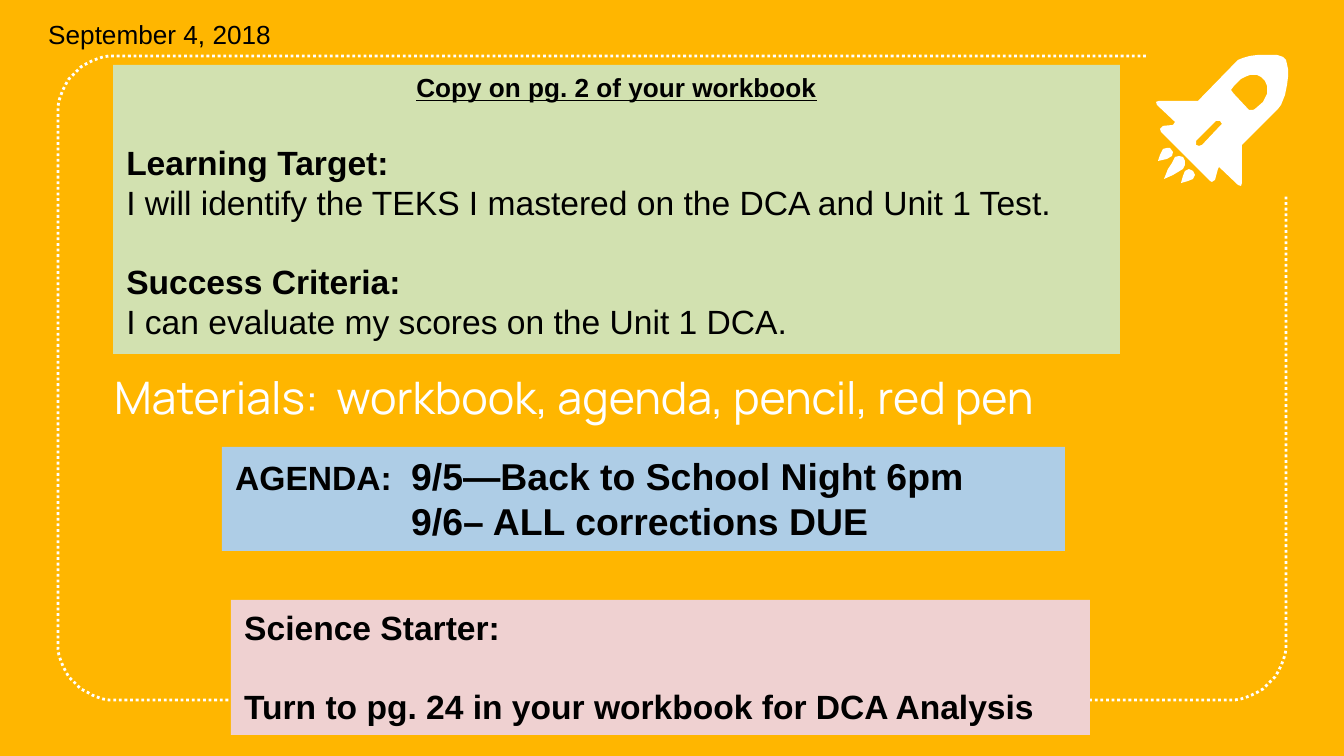
"""Build the class opener slide with learning target, materials, agenda and starter."""
from math import cos, radians, sin

from pptx import Presentation
from pptx.dml.color import RGBColor
from pptx.enum.dml import MSO_LINE
from pptx.enum.shapes import MSO_SHAPE
from pptx.enum.text import MSO_ANCHOR, MSO_AUTO_SIZE, PP_ALIGN
from pptx.util import Emu, Pt

PX = 914400 / 134.4
AMBER = RGBColor(0xFF, 0xB6, 0x00)
WHITE = RGBColor(0xFF, 0xFF, 0xFF)
BLACK = RGBColor(0x00, 0x00, 0x00)
GREEN = RGBColor(0xD2, 0xE1, 0xB0)
PINK = RGBColor(0xEF, 0xD1, 0xD1)
BLUE = RGBColor(0xAE, 0xCD, 0xE6)


def px(length):
    return Emu(round(length * PX))


def draw_outline(shapes, contours, close):
    builder = shapes.build_freeform(*contours[0][0], scale=PX)
    for index, points in enumerate(contours):
        if index:
            builder.move_to(*points[0])
        builder.add_line_segments(points[1:], close=close)
    shape = builder.convert_to_shape()
    shape.shadow.inherit = False
    return shape


presentation = Presentation()
presentation.slide_width = px(1344)
presentation.slide_height = px(756)
slide = presentation.slides.add_slide(presentation.slide_layouts[5])
slide.background.fill.solid()
slide.background.fill.fore_color.rgb = AMBER

left, top, right, bottom, radius = 58, 56, 1286, 700, 57
corners = [
    (left + radius, top + radius, 270),
    (left + radius, bottom - radius, 180),
    (right - radius, bottom - radius, 90),
]
frame_points = [(1146, top)]
for center_x, center_y, start in corners:
    for step in range(0, 91, 6):
        angle = radians(start - step)
        frame_points.append((center_x + radius * cos(angle), center_y + radius * sin(angle)))
frame_points.append((right, 196))
frame = draw_outline(slide.shapes, [frame_points], close=False)
frame.fill.background()
frame.line.color.rgb = WHITE
frame.line.width = Pt(1.5)
frame.line.dash_style = MSO_LINE.ROUND_DOT

rocket_body = [
    (1266, 55), (1258, 55), (1250, 56), (1243, 58), (1238, 60), (1234, 64), (1198, 101),
    (1159, 101), (1156, 102), (1157, 105), (1175, 122), (1173, 125), (1163, 126),
    (1160, 129), (1161, 132), (1210, 181), (1212, 182), (1215, 180), (1218, 169),
    (1219, 167), (1238, 185), (1241, 186), (1242, 183), (1242, 145), (1278, 109),
    (1281, 105), (1285, 95), (1287, 85), (1288, 77), (1288, 69), (1286, 60),
    (1283, 57), (1277, 55),
]
rocket_window = [
    (1253, 75), (1257, 75), (1261, 77), (1265, 81), (1267, 86), (1267, 94), (1263, 102),
    (1255, 109), (1253, 110), (1249, 110), (1234, 94), (1231, 90), (1234, 86),
    (1241, 79), (1245, 77), (1250, 75),
]
rocket_slot = [
    (1218, 121), (1220, 121), (1222, 124), (1220, 126), (1202, 145), (1199, 146),
    (1196, 145), (1196, 141), (1216, 121),
]
middle_flame = [
    (1179, 156), (1175, 157), (1172, 163), (1168, 169), (1164, 179), (1173, 175),
    (1183, 169), (1185, 165), (1185, 161), (1183, 157),
]
right_flame = [
    (1189, 169), (1185, 171), (1183, 176), (1181, 183), (1188, 181), (1193, 179),
    (1195, 175), (1193, 171),
]
left_flame = [
    (1167, 148), (1163, 149), (1160, 155), (1158, 161), (1167, 159), (1172, 156),
    (1173, 152), (1170, 148),
]
rocket = slide.shapes.add_group_shape()
for contours in ([rocket_body, rocket_window, rocket_slot], [middle_flame], [right_flame], [left_flame]):
    part = draw_outline(rocket.shapes, contours, close=True)
    part.fill.solid()
    part.fill.fore_color.rgb = WHITE
    part.line.fill.background()

title = slide.shapes.title
title_place = {"left": px(101), "top": px(360), "width": px(1142), "height": px(77)}
for name, value in title_place.items():
    setattr(title, name, value)
inset = px(13)
title_format = {
    "text": "Materials:  workbook, agenda, pencil, red pen",
    "auto_size": MSO_AUTO_SIZE.NONE,
    "word_wrap": True,
    "vertical_anchor": MSO_ANCHOR.BOTTOM,
    "margin_left": inset,
    "margin_right": inset,
    "margin_top": inset,
    "margin_bottom": inset,
}
for name, value in title_format.items():
    setattr(title.text_frame, name, value)
title_paragraph = title.text_frame.paragraphs[0]
title_paragraph.alignment = PP_ALIGN.LEFT
title_font = title_paragraph.runs[0].font
for name, value in {"name": "Manrope", "size": Pt(24)}.items():
    setattr(title_font, name, value)
title_font.color.rgb = WHITE

plain = {"name": "Arial", "size": Pt(18), "bold": False}
strong = plain | {"bold": True}
large = strong | {"size": Pt(20)}
small = plain | {"size": Pt(14)}
heading = small | {"bold": True, "underline": True}
start = {"alignment": PP_ALIGN.LEFT}
centered = {"alignment": PP_ALIGN.CENTER}
after_gap = start | {"space_before": Pt(20.7)}

boxes = [
    ((35, 12, 253, 46), None, [(start, [("September 4, 2018", small)])]),
    ((113, 65, 1007, 289), GREEN, [
        (centered, [("Copy on pg. 2 of your workbook", heading)]),
        (after_gap, [("Learning Target:", strong)]),
        (start, [("I will identify the TEKS I mastered on the DCA and Unit 1 Test.", plain)]),
        (after_gap, [("Success Criteria:", strong)]),
        (start, [("I can evaluate my scores on the Unit 1 DCA.", plain)]),
    ]),
    ((231, 600, 859, 135), PINK, [
        (start, [("Science Starter:", strong)]),
        (after_gap, [("Turn to pg. 24 in your workbook for DCA Analysis", strong)]),
    ]),
    ((222, 447, 843, 104), BLUE, [
        (start, [("AGENDA:\t", strong), ("9/5—Back to School Night 6pm", large)]),
        (start, [("9/6– ALL corrections DUE", large)]),
    ]),
]
for place, fill, paragraphs in boxes:
    bounds = [px(length) for length in place]
    if fill is None:
        shape = slide.shapes.add_textbox(*bounds)
    else:
        shape = slide.shapes.add_shape(MSO_SHAPE.RECTANGLE, *bounds)
        shape.shadow.inherit = False
        shape.fill.solid()
        shape.fill.fore_color.rgb = fill
        shape.line.fill.background()
    text_frame = shape.text_frame
    text_frame.word_wrap = True
    text_frame.vertical_anchor = MSO_ANCHOR.TOP
    for index, (paragraph_format, runs) in enumerate(paragraphs):
        paragraph = text_frame.add_paragraph() if index else text_frame.paragraphs[0]
        for name, value in paragraph_format.items():
            setattr(paragraph, name, value)
        for text, font_format in runs:
            run = paragraph.add_run()
            run.text = text
            for name, value in font_format.items():
                setattr(run.font, name, value)
            run.font.color.rgb = BLACK

agenda_indent = px(176)
for paragraph, first_line in zip(text_frame.paragraphs, (-agenda_indent, 0)):
    properties = paragraph._p.get_or_add_pPr()
    properties.set("marL", str(agenda_indent))
    properties.set("indent", str(first_line))

presentation.save("out.pptx")
